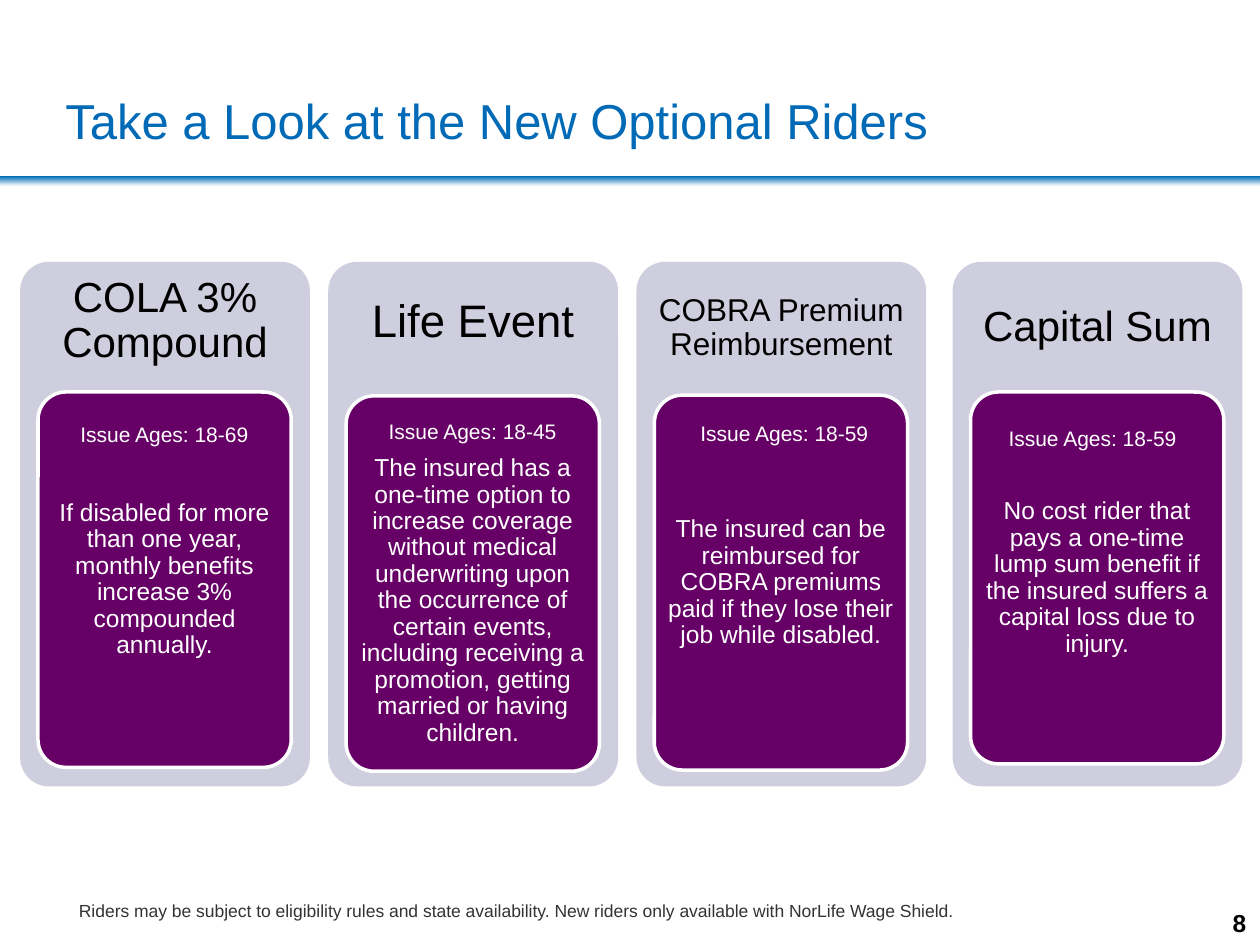
from dataclasses import dataclass

from pptx import Presentation
from pptx import util as u
from pptx.dml.color import RGBColor
from pptx.enum import shapes, text


@dataclass(frozen=True)
class Theme:
    font: str = "Arial"
    blue: str = "006AB6"
    pale_blue: str = "E7F1F8"
    card: str = "CECEDE"
    purple: str = "660066"
    white: str = "FFFFFF"
    black: str = "000000"
    grey: str = "333333"
    title_size: int = 28
    body_size: int = 14
    age_size: int = 12
    note_size: int = 10
    number_size: int = 14


THEME = Theme()
TITLE = "Take a Look at the New Optional Riders"
NOTE = ("Riders may be subject to eligibility rules and state availability. "
        "New riders only available with NorLife Wage Shield.")
PAGE_NUMBER = "8"

RIDERS = [
    dict(name="COLA 3% Compound", size=24, name_centre=183.6, nudge=0,
         body_top=224, body_height=214.5, body_inset=0,
         ages="Issue Ages: 18-69", age_box=(23.8, 236.2, 117.4, 25.2),
         benefit="If disabled for more than one year, monthly benefits "
                 "increase 3% compounded annually."),
    dict(name="Life Event", size=26, name_centre=184.3, nudge=0,
         body_top=226.2, body_height=214.5, body_inset=20,
         ages="Issue Ages: 18-45", age_box=(23.8, 234.7, 117.4, 25.2),
         benefit="The insured has a one-time option to increase coverage "
                 "without medical underwriting upon the occurrence of certain "
                 "events, including receiving a promotion, getting married "
                 "or having children."),
    dict(name="COBRA Premium Reimbursement", size=18, name_centre=187.6, nudge=0,
         body_top=225.8, body_height=214.2, body_inset=0,
         ages="Issue Ages: 18-59", age_box=(23, 233.3, 123.1, 30.2),
         benefit="The insured can be reimbursed for COBRA premiums paid "
                 "if they lose their job while disabled."),
    dict(name="Capital Sum", size=24, name_centre=187.6, nudge=4.6,
         body_top=224, body_height=212.5, body_inset=0,
         ages="Issue Ages: 18-59", age_box=(13.7, 239, 132.5, 24.5),
         benefit="No cost rider that pays a one-time lump sum benefit "
                 "if the insured suffers a capital loss due to injury."),
]

CARD_LEFT, CARD_TOP, CARD_WIDTH, CARD_HEIGHT = 11.5, 149.6, 165.6, 299.8
CARD_STEP = 176.1
BODY_OFFSET, BODY_WIDTH = 10.2, 144.7


def points(*values):
    return [u.Pt(value) for value in values]


def write(shape, content, size, color, bold=False, align=text.PP_ALIGN.LEFT,
          anchor=text.MSO_ANCHOR.MIDDLE, insets=(0, 0, 0, 0), line_spacing=1.0):
    frame = shape.text_frame
    frame.word_wrap = True
    frame.auto_size = text.MSO_AUTO_SIZE.NONE
    frame.vertical_anchor = anchor
    (frame.margin_left, frame.margin_top,
     frame.margin_right, frame.margin_bottom) = points(*insets)
    frame.text = content
    paragraph = frame.paragraphs[0]
    paragraph.alignment = align
    paragraph.line_spacing = line_spacing
    font = paragraph.runs[0].font
    font.name = THEME.font
    font.size = u.Pt(size)
    font.bold = bold
    font.color.rgb = RGBColor.from_string(color)


def add_panel(slide, box, fill, radius=None, outline=None):
    kind = shapes.MSO_SHAPE.ROUNDED_RECTANGLE if radius else shapes.MSO_SHAPE.RECTANGLE
    shape = slide.shapes.add_shape(kind, *points(*box))
    if radius:
        shape.adjustments[0] = radius
    shape.shadow.inherit = False
    shape.fill.solid()
    shape.fill.fore_color.rgb = RGBColor.from_string(fill)
    if outline:
        shape.line.color.rgb = RGBColor.from_string(outline)
        shape.line.width = u.Pt(2)
    else:
        shape.line.fill.background()
    return shape


def add_rule(slide):
    rule = add_panel(slide, (0, 100.8, 720, 5), THEME.blue)
    rule.fill.gradient()
    rule.fill.gradient_angle = 270
    for stop, color in zip(rule.fill.gradient_stops, (THEME.blue, THEME.pale_blue)):
        stop.color.rgb = RGBColor.from_string(color)


def add_rider(slide, index, rider):
    left = CARD_LEFT + index * CARD_STEP + rider["nudge"]
    centred = dict(align=text.PP_ALIGN.CENTER, line_spacing=0.9)

    card = add_panel(slide, (left, CARD_TOP, CARD_WIDTH, CARD_HEIGHT), THEME.card, 0.1)
    below_name = CARD_HEIGHT - 2 * (rider["name_centre"] - CARD_TOP)
    write(card, rider["name"], rider["size"], THEME.black,
          insets=(4, 0, 4, below_name), **centred)

    body = add_panel(slide, (left + BODY_OFFSET, rider["body_top"], BODY_WIDTH,
                             rider["body_height"]), THEME.purple, 0.11, THEME.white)
    write(body, rider["benefit"], THEME.body_size, THEME.white,
          insets=(2, rider["body_inset"], 2, 0), **centred)

    offset, top, width, height = rider["age_box"]
    ages = add_panel(slide, (left + offset, top, width, height), THEME.purple)
    write(ages, rider["ages"], THEME.age_size, THEME.white,
          insets=(3, 2, 3, 2), **centred)


def main():
    presentation = Presentation()
    presentation.slide_width, presentation.slide_height = points(720, 540)
    slide = presentation.slides.add_slide(presentation.slide_layouts[5])

    add_rule(slide)
    title = slide.shapes.title
    title.left, title.top, title.width, title.height = points(37.4, 36, 641, 65.5)
    write(title, TITLE, THEME.title_size, THEME.blue)

    for index, rider in enumerate(RIDERS):
        add_rider(slide, index, rider)

    number = slide.shapes.add_textbox(*points(544.3, 498.2, 167.8, 37.4))
    write(number, PAGE_NUMBER, THEME.number_size, THEME.black, bold=True,
          align=text.PP_ALIGN.RIGHT, anchor=text.MSO_ANCHOR.BOTTOM)
    note = slide.shapes.add_textbox(*points(38, 510.5, 527, 19.4))
    write(note, NOTE, THEME.note_size, THEME.grey, insets=(7.2, 3.6, 7.2, 3.6))

    presentation.save("out.pptx")


if __name__ == "__main__":
    main()
